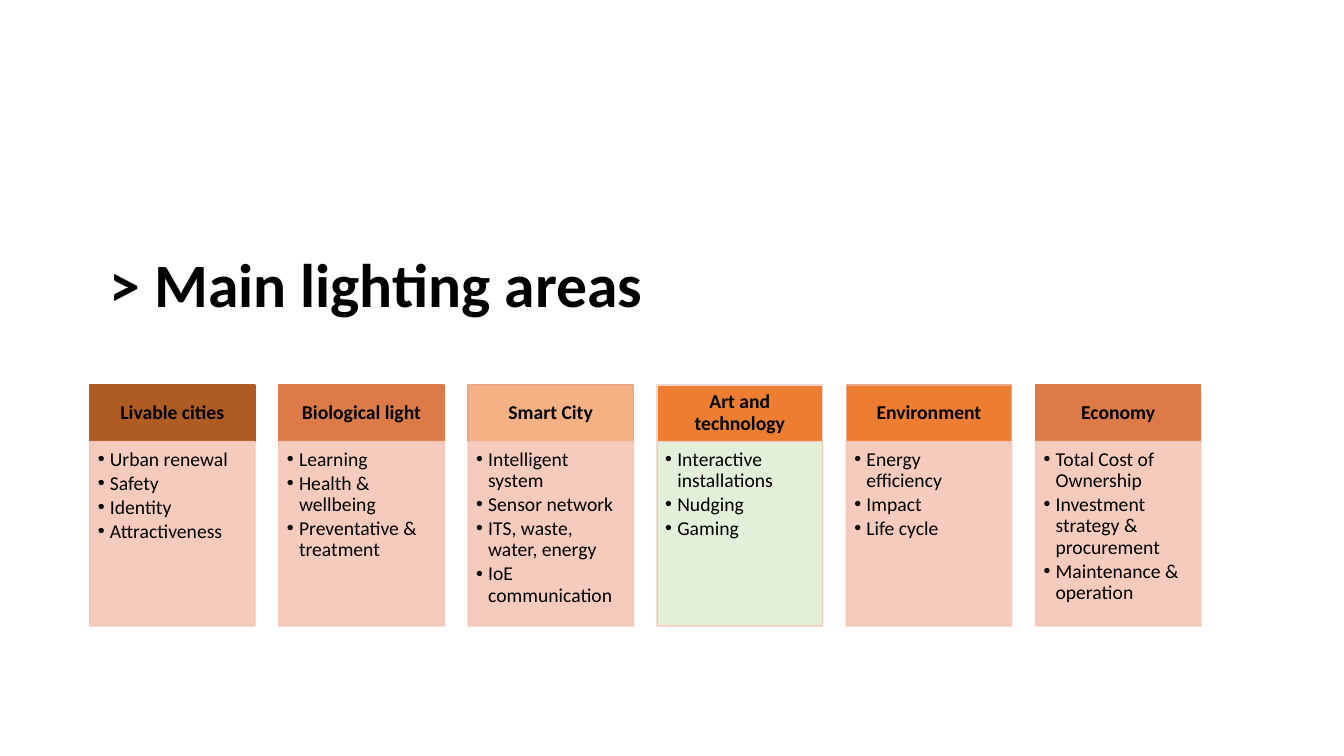
import pptx
import pptx.util
import pptx.dml.color
import pptx.enum.shapes
import pptx.enum.text
import pptx.oxml.ns
from lxml import etree

Inches, Pt = pptx.util.Inches, pptx.util.Pt
ALIGN = pptx.enum.text.PP_ALIGN
ANCHOR = pptx.enum.text.MSO_ANCHOR

COLORS = {
    "black": "000000", "brown": "AF5C24", "rust": "DC7B47", "peach": "F4B183",
    "orange": "ED7D31", "salmon": "EBA587", "blush": "F7D5CA",
    "pink": "F5C6B6", "green": "E2F0D9",
}

# heading, heading fill, heading line, body fill, points
AREAS = [
    ("Livable cities", "brown", "brown", "pink",
     ["Urban renewal", "Safety", "Identity", "Attractiveness"]),
    ("Biological light", "rust", "rust", "pink",
     ["Learning", "Health & wellbeing", "Preventative & treatment"]),
    ("Smart City", "peach", "salmon", "pink",
     ["Intelligent system", "Sensor network", "ITS, waste, water, energy",
      "IoE communication"]),
    ("Art and technology", "orange", "blush", "green",
     ["Interactive installations", "Nudging", "Gaming"]),
    ("Environment", "orange", "salmon", "pink",
     ["Energy efficiency", "Impact", "Life cycle"]),
    ("Economy", "rust", "rust", "pink",
     ["Total Cost of Ownership", "Investment strategy & procurement",
      "Maintenance & operation"]),
]


def rgb(name):
    return pptx.dml.color.RGBColor.from_string(COLORS[name])


def add_sub(parent, tag, **attrs):
    return etree.SubElement(parent, pptx.oxml.ns.qn(tag), attrs)


def fade(fill):
    """Make a solid fill 90 % opaque."""
    for color in fill._xPr.iter(pptx.oxml.ns.qn("a:srgbClr")):
        add_sub(color, "a:alpha", val="90000")


def write(shape, lines, size=14, bold=False, align=ALIGN.LEFT,
          anchor=ANCHOR.TOP, inset=(0.1, 0.05, 0.1, 0.05), after=0,
          bullet=False):
    frame = shape.text_frame
    frame.word_wrap = True
    frame.vertical_anchor = anchor
    (frame.margin_left, frame.margin_top,
     frame.margin_right, frame.margin_bottom) = map(Inches, inset)
    for i, line in enumerate(lines):
        para = frame.add_paragraph() if i else frame.paragraphs[0]
        para.alignment = align
        para.line_spacing = 0.9
        para.space_after = Pt(after)
        if bullet:
            props = para._p.get_or_add_pPr()
            props.set("marL", str(Inches(0.12)))
            props.set("indent", str(Inches(-0.12)))
            add_sub(props, "a:buFont", typeface="Arial")
            add_sub(props, "a:buChar", char="•")
        run = para.add_run()
        run.text = line
        run.font.name = "Calibri"
        run.font.size = Pt(size)
        run.font.bold = bold
        run.font.color.rgb = rgb("black")


def add_box(slide, left, top, width, height, fill, line):
    box = slide.shapes.add_shape(
        pptx.enum.shapes.MSO_SHAPE.RECTANGLE,
        *map(Inches, (left, top, width, height)))
    box.shadow.inherit = False
    box.fill.solid()
    box.fill.fore_color.rgb = rgb(fill)
    box.line.color.rgb = rgb(line)
    box.line.width = Pt(1)
    if fill == "pink":
        fade(box.fill)
    if line == "pink":
        fade(box.line.fill)
    return box


def add_title(slide, left, top, width, height):
    box = slide.shapes.add_textbox(*map(Inches, (left, top, width, height)))
    write(box, ["> Main lighting areas"], size=44, bold=True,
          anchor=ANCHOR.MIDDLE)


def add_card(slide, left, top, width, height, area):
    """Draw one lighting area: a heading above its list of points."""
    name, fill, line, body, points = area
    head = 0.56
    box = add_box(slide, left, top, width, head, fill, line)
    write(box, [name], bold=True, align=ALIGN.CENTER, anchor=ANCHOR.MIDDLE,
          inset=(0.11, 0.06, 0.11, 0.06))
    box = add_box(slide, left, top + head, width, height - head, body, "pink")
    write(box, points, inset=(0.08, 0.08, 0.11, 0.12), after=2, bullet=True)


def add_cards(slide, left, top, width, height):
    card = 1.64
    step = (width - card) / (len(AREAS) - 1)
    for i, area in enumerate(AREAS):
        add_card(slide, left + i * step, top, card, height, area)


def main():
    deck = pptx.Presentation()
    deck.slide_width, deck.slide_height = Inches(13.33), Inches(7.5)
    slide = deck.slides.add_slide(deck.slide_layouts[6])
    add_title(slide, 0.99, 2.23, 12, 1.25)
    add_cards(slide, 0.89, 3.82, 11.02, 2.39)
    deck.save("out.pptx")


if __name__ == "__main__":
    main()
